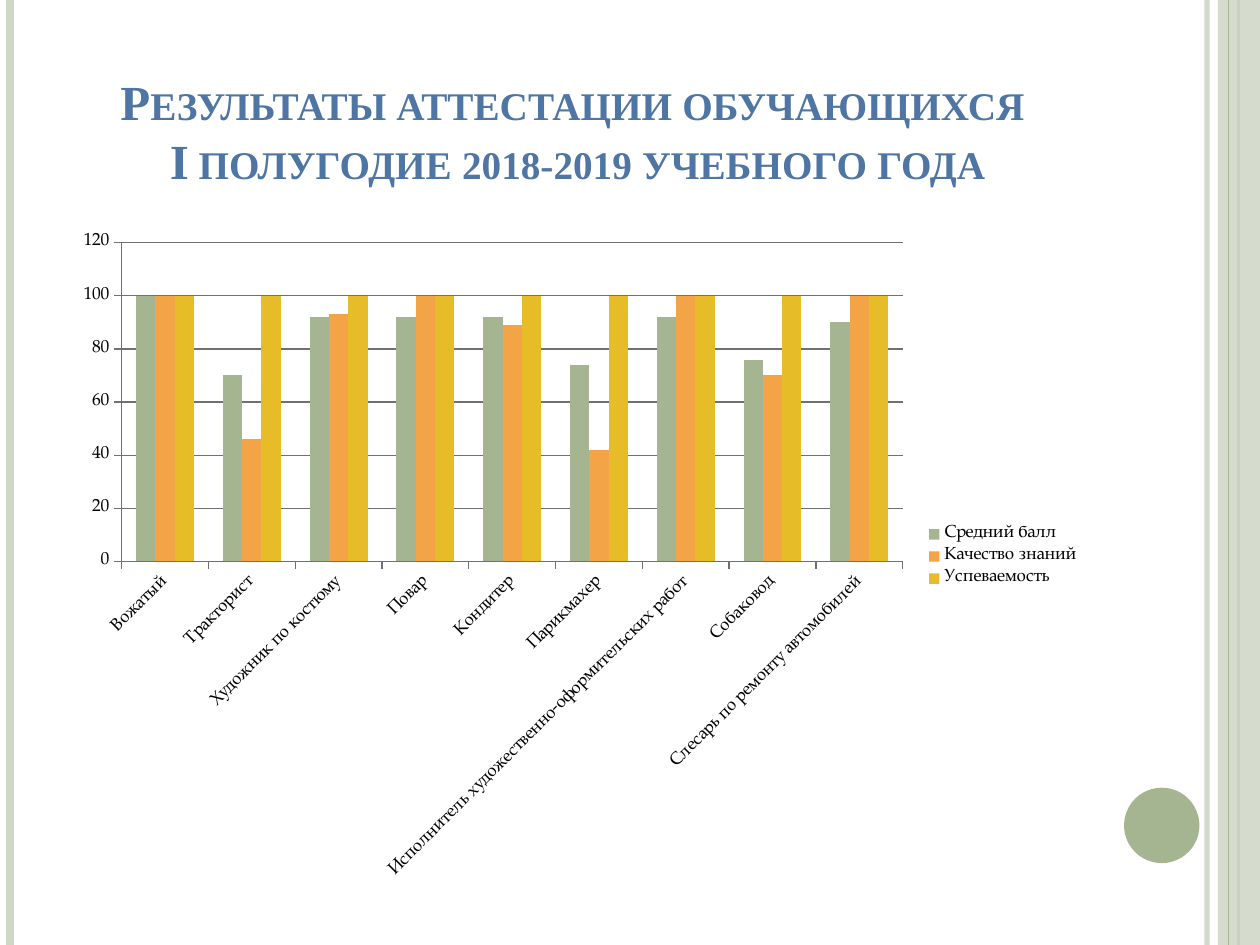
"""Build a slide with a clustered column chart of student assessment results."""
from lxml.etree import SubElement
from pptx import Presentation
from pptx.chart.data import CategoryChartData
from pptx.dml.color import RGBColor
from pptx.enum.chart import XL_CHART_TYPE as ChartType, XL_LEGEND_POSITION as LegendPosition
from pptx.enum.chart import XL_TICK_MARK as TickMark
from pptx.enum.shapes import MSO_CONNECTOR as Connector, MSO_SHAPE as Shape
from pptx.enum.text import MSO_ANCHOR as Anchor, PP_ALIGN as Align
from pptx.oxml.ns import qn
from pptx.util import Cm, Pt

WIDTH, HEIGHT = 25.4, 19.05
GREEN, PALE, GREY = "A5B592", "CFD7C7", "707070"

TITLE = "Результаты аттестации обучающихся \vI полугодие 2018-2019 учебного года"
TITLE_FONT = {"name": "Times New Roman", "size": Pt(28), "bold": True}
CHART_FONT = {"name": "TeX Gyre Pagella", "size": Pt(10), "bold": False}

SERIES = [("Средний балл", GREEN), ("Качество знаний", "F3A447"), ("Успеваемость", "E7BC29")]
RESULTS = [
    ("Вожатый", 100, 100, 100),
    ("Тракторист", 70, 46, 100),
    ("Художник по костюму", 92, 93, 100),
    ("Повар", 92, 100, 100),
    ("Кондитер", 92, 89, 100),
    ("Парикмахер", 74, 42, 100),
    ("Исполнитель художественно-оформительских работ", 92, 100, 100),
    ("Собаковод", 76, 70, 100),
    ("Слесарь по ремонту автомобилей", 90, 100, 100),
]
VALUE_AXIS = {
    "minimum_scale": 0,
    "maximum_scale": 120,
    "major_unit": 20,
    "has_major_gridlines": True,
}

STRIPES_BELOW = [(24.33, PALE, 3, 93), (0.21, PALE, 4.5, 100), (24.97, GREEN, 1.5, 100)]
STRIPES_ABOVE = [(24.77, GREEN, 0.75, 100)]
BAND = (Shape.RECTANGLE, (24.55, 0, 0.85, HEIGHT), PALE, 87)
CIRCLE = (Shape.OVAL, (22.66, 15.88, 1.52, 1.52), GREEN, 100)


def set_values(target, values):
    """Set every attribute named in the dict."""
    for name, value in values.items():
        setattr(target, name, value)


def paint(color_owner, color, opacity=100):
    """Give a fill a solid colour with an opacity in percent."""
    color_owner.solid()
    color_owner.fore_color.rgb = RGBColor.from_string(color)
    if opacity < 100:
        choice = color_owner._xPr.find(qn("a:solidFill"))[0]
        SubElement(choice, qn("a:alpha")).set("val", str(opacity * 1000))


def add_stripe(slide, x, color, width, opacity):
    """Draw a vertical line over the full slide height."""
    stripe = slide.shapes.add_connector(Connector.STRAIGHT, Cm(x), 0, Cm(x), Cm(HEIGHT))
    stripe.line.width = Pt(width)
    paint(stripe.line.fill, color, opacity)
    SubElement(stripe._element.spPr, qn("a:effectLst"))


def add_figure(slide, kind, box, color, opacity):
    """Draw a filled shape without outline."""
    shape = slide.shapes.add_shape(kind, *map(Cm, box))
    shape.shadow.inherit = False
    shape.line.fill.background()
    paint(shape.fill, color, opacity)


def add_title(slide):
    """Write the two-line heading in small capitals."""
    frame = slide.shapes.add_textbox(Cm(1.27), Cm(0.76), Cm(20.75), Cm(3.18)).text_frame
    set_values(frame, {"word_wrap": True, "vertical_anchor": Anchor.BOTTOM})
    paragraph = frame.paragraphs[0]
    paragraph.text = TITLE
    paragraph.alignment = Align.CENTER
    for run in paragraph.runs:
        set_values(run.font, TITLE_FONT)
        paint(run.font.fill, "4E75A3")
        run._r.get_or_add_rPr().set("cap", "small")


def add_results_chart(slide):
    """Place the column chart with its axes and legend."""
    names, *columns = zip(*RESULTS)
    data = CategoryChartData()
    data.categories = names
    for (name, _), values in zip(SERIES, columns):
        data.add_series(name, values)
    box = map(Cm, (1.27, 4.45, 20.75, 13.54))
    chart = slide.shapes.add_chart(ChartType.COLUMN_CLUSTERED, *box, data).chart
    set_values(chart, {"has_title": False, "has_legend": True})
    set_values(chart.legend, {"position": LegendPosition.RIGHT, "include_in_layout": False})
    set_values(chart.font, CHART_FONT)
    paint(chart.font.fill, "000000")

    plot = chart.plots[0]
    set_values(plot, {"gap_width": 150, "overlap": 0, "vary_by_categories": False})
    for series, (_, color) in zip(plot.series, SERIES):
        paint(series.format.fill, color)

    set_values(chart.value_axis, VALUE_AXIS)
    for axis in (chart.category_axis, chart.value_axis):
        set_values(axis, {"major_tick_mark": TickMark.OUTSIDE, "minor_tick_mark": TickMark.NONE})
        set_values(axis.tick_labels.font, CHART_FONT)
    for part in (chart.category_axis, chart.value_axis, chart.value_axis.major_gridlines):
        paint(part.format.line.fill, GREY)
        part.format.line.width = Pt(0.75)
    chart.category_axis._element.txPr.bodyPr.set("rot", "-2700000")


def main():
    """Assemble and save the slide."""
    presentation = Presentation()
    set_values(presentation, {"slide_width": Cm(WIDTH), "slide_height": Cm(HEIGHT)})
    slide = presentation.slides.add_slide(presentation.slide_layouts[6])
    for stripe in STRIPES_BELOW:
        add_stripe(slide, *stripe)
    add_figure(slide, *BAND)
    for stripe in STRIPES_ABOVE:
        add_stripe(slide, *stripe)
    add_figure(slide, *CIRCLE)
    add_title(slide)
    add_results_chart(slide)
    presentation.save("out.pptx")


if __name__ == "__main__":
    main()
